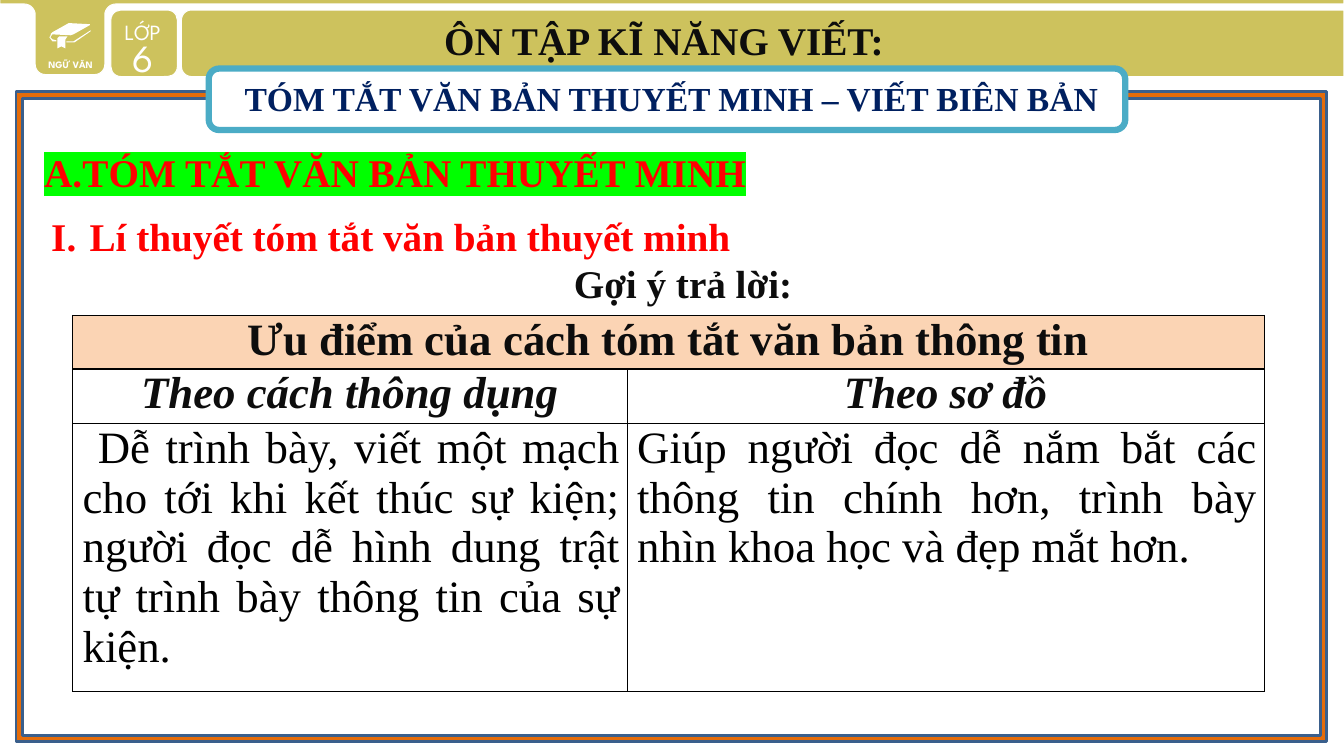
from dataclasses import dataclass
from math import cos, radians, sin
from typing import Optional

from lxml.etree import SubElement
from pptx import Presentation
from pptx.dml.color import RGBColor
from pptx.enum.shapes import MSO_SHAPE
from pptx.enum.text import MSO_ANCHOR, MSO_AUTO_SIZE, PP_ALIGN
from pptx.oxml.ns import qn
from pptx.util import Inches, Pt

Point = tuple[float, float]
Box = tuple[float, float, float, float]


@dataclass(frozen=True)
class Theme:
    olive: str = "CDC25D"
    white: str = "FFFFFF"
    orange: str = "E46C0A"
    steel: str = "3A5F8C"
    teal: str = "4BACC6"
    navy: str = "002060"
    red: str = "FF0000"
    lime: str = "00FF00"
    ink: str = "0D0D0D"
    black: str = "000000"
    peach: str = "FBD4B4"
    serif: str = "Times New Roman"
    badge: str = "League Spartan"
    tiny: float = 7
    small: float = 15.5
    digit: float = 27.5
    sub: float = 24
    head: float = 28
    table: float = 32


THEME = Theme()


@dataclass(frozen=True)
class Style:
    size: float
    color: str
    font: str = THEME.serif
    bold: bool = True
    slant: bool = False
    align: PP_ALIGN = PP_ALIGN.CENTER
    space: Optional[float | Pt] = None
    margin: float = 0
    indent: float = 0
    number: str = ""
    mark: str = ""


@dataclass(frozen=True)
class Label:
    box: Box
    lines: tuple[tuple[str, Style], ...]


@dataclass(frozen=True)
class Outline:
    points: list[Point]
    fill: str = THEME.white
    edge: str = ""


@dataclass(frozen=True)
class Panel:
    kind: MSO_SHAPE
    box: Box
    fill: str
    edge: str
    width: float
    adjust: float


@dataclass(frozen=True)
class Cell:
    row: int
    col: int
    text: str
    style: Style
    fill: str = ""


def arc(x: float, y: float, radius: float, start: int, end: int) -> list[Point]:
    turns = [radians(start + (end - start) * i / 8) for i in range(9)]
    return [(x + radius * cos(t), y + radius * sin(t)) for t in turns]


def paint(shape, fill: str, edge: str, width: float) -> None:
    shape.shadow.inherit = False
    shape.fill.solid()
    shape.fill.fore_color.rgb = RGBColor.from_string(fill)
    if edge:
        shape.line.color.rgb = RGBColor.from_string(edge)
        shape.line.width = Pt(width)
    else:
        shape.line.fill.background()


def draw_outline(slide, item: Outline) -> None:
    points = [(Inches(x), Inches(y)) for x, y in item.points]
    form = slide.shapes.build_freeform(*points[0])
    form.add_line_segments(points[1:], close=True)
    paint(form.convert_to_shape(), item.fill, item.edge, 0.75)


def draw_panel(slide, item: Panel) -> None:
    shape = slide.shapes.add_shape(item.kind, *map(Inches, item.box))
    shape.adjustments[0] = item.adjust
    paint(shape, item.fill, item.edge, item.width)


def write(para, text: str, style: Style) -> None:
    run = para.add_run()
    run.text = text
    para.alignment = style.align
    para.space_before = Pt(0)
    if style.space:
        para.line_spacing = style.space
    props = para._p.get_or_add_pPr()
    props.set("marL", str(Inches(style.margin)))
    props.set("indent", str(Inches(style.indent)))
    if style.number:
        SubElement(props, qn("a:buAutoNum"), type=style.number)
    font = para.font
    font.name, font.size = style.font, Pt(style.size)
    font.bold, font.italic = style.bold, style.slant
    font.color.rgb = RGBColor.from_string(style.color)
    if style.mark:
        glow = SubElement(run._r.get_or_add_rPr(), qn("a:highlight"))
        SubElement(glow, qn("a:srgbClr"), val=style.mark)


def fill_label(shape, item: Label) -> None:
    shape.left, shape.top, shape.width, shape.height = map(Inches, item.box)
    frame = shape.text_frame
    frame.word_wrap = False
    frame.auto_size = MSO_AUTO_SIZE.NONE
    frame.vertical_anchor = MSO_ANCHOR.TOP
    for i, (text, style) in enumerate(item.lines):
        write(frame.add_paragraph() if i else frame.paragraphs[0], text, style)


def draw_label(slide, item: Label) -> None:
    fill_label(slide.shapes.add_textbox(*map(Inches, item.box)), item)


def frame_cell(cell) -> None:
    props = cell._tc.get_or_add_tcPr()
    for side in ("lnL", "lnR", "lnT", "lnB"):
        line = SubElement(props, qn(f"a:{side}"), w=str(Pt(1)))
        SubElement(SubElement(line, qn("a:solidFill")), qn("a:srgbClr"), val=THEME.black)
    cell.margin_left = cell.margin_right = Inches(0.07)
    cell.margin_top = cell.margin_bottom = 0
    cell.fill.background()


def draw_table(slide, cells: list[Cell]) -> None:
    widths, heights = (5.5, 6.32), (0.53, 0.54, 2.66)
    box = map(Inches, (0.72, 3.13, sum(widths), sum(heights)))
    table = slide.shapes.add_table(len(heights), len(widths), *box).table
    table.first_row = table.horz_banding = False
    for col, width in zip(table.columns, widths):
        col.width = Inches(width)
    for row, height in zip(table.rows, heights):
        row.height = Inches(height)
    for cell in table.iter_cells():
        frame_cell(cell)
    table.cell(0, 0).merge(table.cell(0, 1))
    for item in cells:
        cell = table.cell(item.row, item.col)
        write(cell.text_frame.paragraphs[0], item.text, item.style)
        if item.fill:
            cell.fill.solid()
            cell.fill.fore_color.rgb = RGBColor.from_string(item.fill)


STRIP = [(0, -0.03), (0, 0.04), *arc(0.24, 0.15, 0.11, -90, 0), *arc(0.45, 0.64, 0.1, 180, 90),
         *arc(0.94, 0.64, 0.1, 90, 0), *arc(1.15, 0.15, 0.11, 180, 270), (13.33, 0.04), (13.33, -0.03)]
BAR = [(13.33, 0.76), *arc(1.9, 0.66, 0.1, 90, 180), *arc(1.9, 0.2, 0.1, 180, 270), (13.33, 0.1)]
COVER = [(0.73, 0.34), (0.7, 0.35), (0.5, 0.34), (0.52, 0.32), (0.68, 0.23), (0.7, 0.23), (0.89, 0.24), (0.89, 0.25)]
RIBBON = [(0.65, 0.48), (0.61, 0.46), (0.57, 0.48), (0.57, 0.38), (0.59, 0.36), (0.67, 0.36), (0.65, 0.39)]
SPINE = [(0.56, 0.4), (0.52, 0.39), (0.5, 0.37), (0.52, 0.34), (0.52, 0.32), (0.49, 0.37), (0.52, 0.41), (0.56, 0.41)]
PAGES = [(0.9, 0.3), (0.73, 0.41), (0.66, 0.41), (0.66, 0.42), (0.74, 0.42), (0.9, 0.31)]
HEADER = [Outline(p, THEME.olive, THEME.white) for p in (STRIP, BAR)]
BOOK = [Outline(p) for p in (COVER, RIBBON, SPINE, PAGES)]
PANELS = [
    Panel(MSO_SHAPE.ROUNDED_RECTANGLE, (1.1, 0.1, 0.66, 0.66), THEME.olive, THEME.white, 0.75, 0.15),
    Panel(MSO_SHAPE.FRAME, (0.16, 0.91, 13, 6.45), THEME.orange, THEME.steel, 2, 0.01),
    Panel(MSO_SHAPE.ROUNDED_RECTANGLE, (2.07, 0.68, 9.09, 0.61), THEME.white, THEME.teal, 4.5, 0.17),
]

TITLE = Label((4.23, 0.04, 4.71, 0.64), (("ÔN TẬP KĨ NĂNG VIẾT:", Style(THEME.head, THEME.ink, space=1.15)),))
LEFT = dict(align=PP_ALIGN.LEFT, space=1.15, margin=0.38, indent=-0.38)
LABELS = [
    Label((0.4, 0.53, 0.6, 0.2), (("NGỮ VĂN", Style(THEME.tiny, THEME.white, THEME.badge)),)),
    Label((1.11, 0.05, 0.61, 0.8), (
        ("LỚP", Style(THEME.small, THEME.white, THEME.badge, False, space=Pt(25))),
        ("6", Style(THEME.digit, THEME.white, THEME.badge, False, space=Pt(25))))),
    Label((2.28, 0.72, 8.76, 0.5), (
        ("TÓM TẮT VĂN BẢN THUYẾT MINH – VIẾT BIÊN BẢN", Style(THEME.sub, THEME.navy)),)),
    Label((0.34, 1.35, 7.23, 0.64), (("TÓM TẮT VĂN BẢN THUYẾT MINH", Style(
        THEME.head, THEME.red, number="alphaUcPeriod", mark=THEME.lime, **LEFT)),)),
    Label((0.41, 1.99, 7.02, 0.64), (("Lí thuyết tóm tắt văn bản thuyết minh", Style(
        THEME.head, THEME.red, number="romanUcPeriod", **LEFT)),)),
    Label((5.53, 2.52, 2.46, 0.57), (("Gợi ý trả lời:", Style(THEME.head, THEME.ink, margin=0.03)),)),
]

WAYS = Style(THEME.table, THEME.ink, slant=True)
BODY = dict(size=THEME.table, color=THEME.black, bold=False, align=PP_ALIGN.JUSTIFY, margin=0.03)
CELLS = [
    Cell(0, 0, "Ưu điểm của cách tóm tắt văn bản thông tin", Style(THEME.table, THEME.ink), THEME.peach),
    Cell(1, 0, "Theo cách thông dụng", WAYS),
    Cell(1, 1, "Theo sơ đồ", WAYS),
    Cell(2, 0, "Dễ trình bày, viết một mạch cho tới khi kết thúc sự kiện; người đọc dễ hình dung "
         "trật tự trình bày thông tin của sự kiện.", Style(indent=0.15, **BODY)),
    Cell(2, 1, "Giúp người đọc dễ nắm bắt các thông tin chính hơn, trình bày nhìn khoa học và đẹp mắt hơn.",
         Style(**BODY)),
]


def main() -> None:
    deck = Presentation()
    deck.slide_width, deck.slide_height = Inches(13.33), Inches(7.5)
    slide = deck.slides.add_slide(deck.slide_layouts[5])
    for item in HEADER + BOOK:
        draw_outline(slide, item)
    for item in PANELS:
        draw_panel(slide, item)
    title = slide.shapes.title
    slide.shapes._spTree.append(title._element)
    fill_label(title, TITLE)
    for item in LABELS:
        draw_label(slide, item)
    draw_table(slide, CELLS)
    deck.save("out.pptx")


if __name__ == "__main__":
    main()
